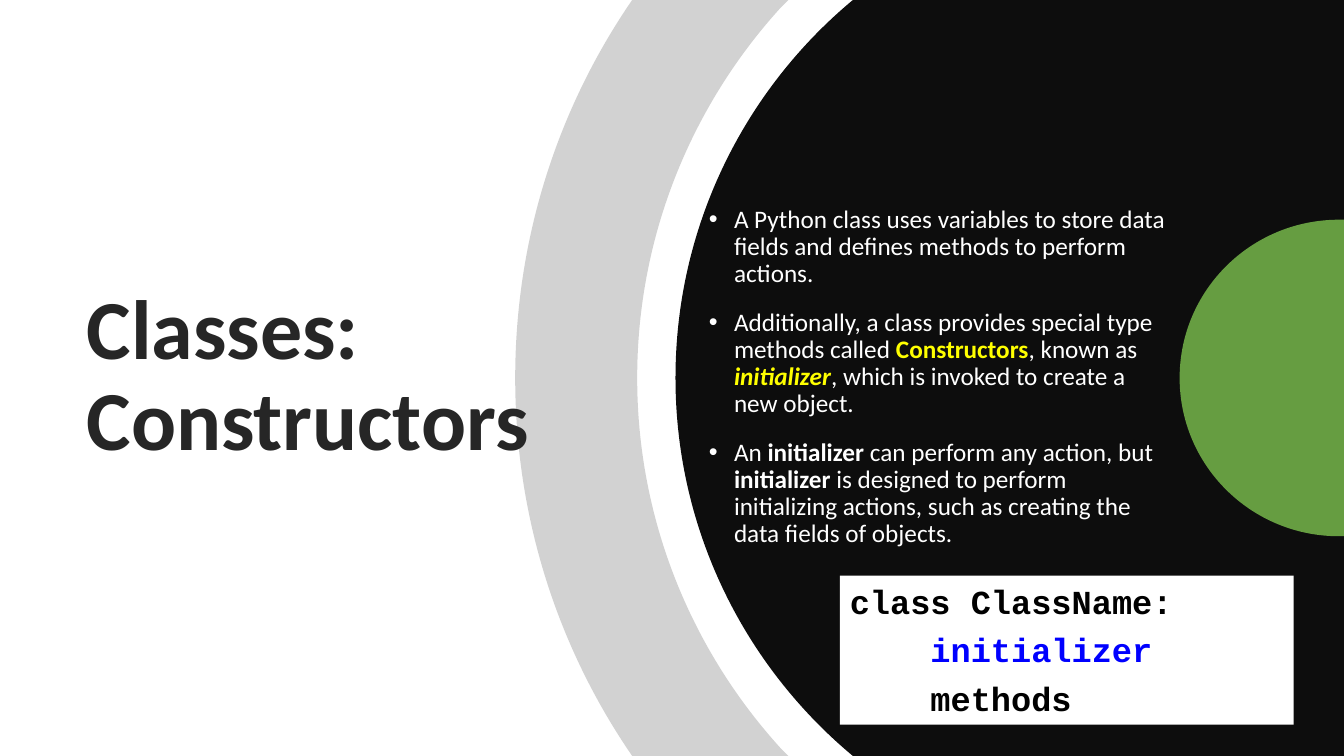
from itertools import chain

from lxml.etree import SubElement
from pptx import Presentation
from pptx.dml.color import RGBColor
from pptx.enum.shapes import MSO_SHAPE as Preset
from pptx.enum.text import MSO_ANCHOR as Anchor, MSO_AUTO_SIZE as AutoSize, PP_ALIGN as Align
from pptx.oxml.ns import qn
from pptx.util import Inches, Pt

COLORS = {
    "panel": "0D0D0D", "ring": "808080", "disc": "70AD47", "title": "262626",
    "white": "FFFFFF", "highlight": "FFFF00", "black": "000000", "keyword": "0000FF",
}
WIDTH, HEIGHT = 13.33, 7.5

PANEL_ARC = [(1.76, 0), (0.69, 0.89), (0, 2.24), (0, 3.75)]
RING_INNER_ARC = [(2.63, 0.08), (1.75, 1.05), (1.21, 2.34), (1.21, 3.75)]
RING_OUTER_ARC = [(1.14, 0.03), (0.42, 1.09), (0, 2.37), (0, 3.75)]
DISC_ARC = [(1.58, 0), (0.71, 0), (0, 0.7), (0, 1.57)]

POINTS = [
    [("A Python class uses variables to store data fields and defines methods "
      "to perform actions.", "plain")],
    [("Additionally, a class provides special type methods called ", "plain"),
     ("Constructors", "term"),
     (", known as ", "plain"),
     ("initializer", "italic term"),
     (", which is invoked to create a new object.", "plain")],
    [("An ", "plain"),
     ("initializer", "strong"),
     (" can perform any action, but ", "plain"),
     ("initializer", "strong"),
     (" is designed to perform initializing actions, such as creating the "
      "data fields of objects.", "plain")],
]
STYLES = {
    "plain": ("white", False, False),
    "strong": ("white", True, False),
    "term": ("highlight", True, False),
    "italic term": ("highlight", True, True),
}
CODE = [("class ClassName:", "black", 0), ("initializer", "keyword", 0.8), ("methods", "black", 0.8)]


def rgb(name):
    """Return the named colour."""
    return RGBColor.from_string(COLORS[name])


def arc_steps(upper, height):
    """Return a line and two curves along an arc mirrored about mid-height, going down."""
    lower = [(x, height - y) for x, y in reversed(upper)]
    return [upper[:1], upper[1:], lower[1:]]


def rising_arc_steps(upper, height):
    """Return the same steps going up."""
    return arc_steps([(x, height - y) for x, y in upper], height)


def add_outline(slide, box, steps, color, opacity=100):
    """Fill an outline whose steps are lines of one point or curves of three."""
    left, top = box[:2]
    points = [(Inches(left + x), Inches(top + y)) for x, y in chain.from_iterable(steps)]
    builder = slide.shapes.build_freeform(*points[0], scale=1.0)
    builder.add_line_segments(points[1:])
    outline = builder.convert_to_shape()
    outline.shadow.inherit = False
    outline.fill.solid()
    outline.fill.fore_color.rgb = rgb(color)
    outline.line.fill.background()
    properties = outline.element.spPr
    segments = iter(properties.findall(".//" + qn("a:lnTo")))
    for step in steps[1:]:
        segment = next(segments)
        if len(step) == 3:
            segment.addprevious(curve := segment.makeelement(qn("a:cubicBezTo")))
            for part in (segment, next(segments), next(segments)):
                curve.append(part[0])
                part.getparent().remove(part)
    if opacity < 100:
        fill_color = properties.find(".//" + qn("a:srgbClr"))
        SubElement(fill_color, qn("a:alpha")).set("val", str(opacity * 1000))


def add_cut_circle(slide, box, arc, color, opacity=100):
    """Fill a box whose left side is an arc."""
    width, height = box[2:]
    shoulder = arc[0][0]
    sides = [[(shoulder, 0)], [(width, 0)], [(width, height)]]
    add_outline(slide, box, sides + rising_arc_steps(arc, height), color, opacity)


def add_ring(slide, box):
    """Draw the translucent band between two arcs."""
    width, height = box[2:]
    outer_edge = 1.16
    steps = [
        [(outer_edge, 0)], [(width, 0)], *arc_steps(RING_INNER_ARC, height),
        [(width, height)], [(outer_edge, height)], *rising_arc_steps(RING_OUTER_ARC, height),
    ]
    add_outline(slide, box, steps, "ring", 35)


def prepare_placeholder(slide, placeholder, box):
    """Place a placeholder in front of what is drawn and return its text frame."""
    slide.shapes.element.append(placeholder.element)
    placeholder.left, placeholder.top, placeholder.width, placeholder.height = map(Inches, box)
    frame = placeholder.text_frame
    frame.word_wrap = True
    frame.auto_size = AutoSize.NONE
    frame.vertical_anchor = Anchor.MIDDLE
    return frame


def add_run(paragraph, text, size, color, bold=False, italic=False, font="Calibri"):
    """Append one formatted run."""
    run = paragraph.add_run()
    run.text = text
    run.font.name, run.font.size = font, Pt(size)
    run.font.bold, run.font.italic = bold, italic
    run.font.color.rgb = rgb(color)


def next_paragraph(frame, index):
    """Return the first paragraph or a new one."""
    return frame.add_paragraph() if index else frame.paragraphs[0]


def fill_title(slide, box):
    """Write the slide title."""
    frame = prepare_placeholder(slide, slide.shapes.title, box)
    heading = frame.paragraphs[0]
    heading.alignment = Align.LEFT
    heading.line_spacing = 0.9
    add_run(heading, "Classes: Constructors", 60, "title", bold=True)


def fill_points(slide, box):
    """Write the bulleted explanation."""
    frame = prepare_placeholder(slide, slide.placeholders[1], box)
    for index, parts in enumerate(POINTS):
        point = next_paragraph(frame, index)
        point.line_spacing = 0.9
        point.space_before = Pt(15)
        properties = point._p.get_or_add_pPr()
        properties.set("marL", str(Inches(0.25)))
        properties.set("indent", str(Inches(-0.25)))
        SubElement(properties, qn("a:buFont")).set("typeface", "Arial")
        SubElement(properties, qn("a:buChar")).set("char", "•")
        for text, style in parts:
            add_run(point, text, 18, *STYLES[style])


def add_code(slide, box):
    """Show the outline of a class in a white panel."""
    panel = slide.shapes.add_shape(Preset.RECTANGLE, *map(Inches, box))
    panel.shadow.inherit = False
    panel.fill.solid()
    panel.fill.fore_color.rgb = rgb("white")
    panel.line.fill.background()
    frame = panel.text_frame
    frame.word_wrap = True
    frame.vertical_anchor = Anchor.TOP
    frame.auto_size = AutoSize.SHAPE_TO_FIT_TEXT
    for index, (text, color, indent) in enumerate(CODE):
        line = next_paragraph(frame, index)
        line.alignment = Align.LEFT
        line.space_after = Pt(6)
        line._p.get_or_add_pPr().set("marL", str(Inches(indent)))
        add_run(line, text, 24, color, bold=True, font="Courier New")


def build_constructors_slide(presentation):
    """Build the slide about class constructors."""
    slide = presentation.slides.add_slide(presentation.slide_layouts[1])
    slide.background.fill.solid()
    slide.background.fill.fore_color.rgb = rgb("white")
    add_cut_circle(slide, (6.7, 0, WIDTH - 6.7, HEIGHT), PANEL_ARC, "panel")
    add_ring(slide, (5.11, 0, 2.71, HEIGHT))
    fill_title(slide, (0.76, 1.19, 4.95, 5.11))
    add_cut_circle(slide, (11.7, 2.18, WIDTH - 11.7, 3.14), DISC_ARC, "disc", 90)
    fill_points(slide, (6.93, 1.19, 4.77, 5.11))
    add_code(slide, (8.33, 5.71, 4.5, 1.48))


def main():
    """Create and save the presentation."""
    presentation = Presentation()
    presentation.slide_width, presentation.slide_height = Inches(WIDTH), Inches(HEIGHT)
    build_constructors_slide(presentation)
    presentation.save("out.pptx")


if __name__ == "__main__":
    main()
